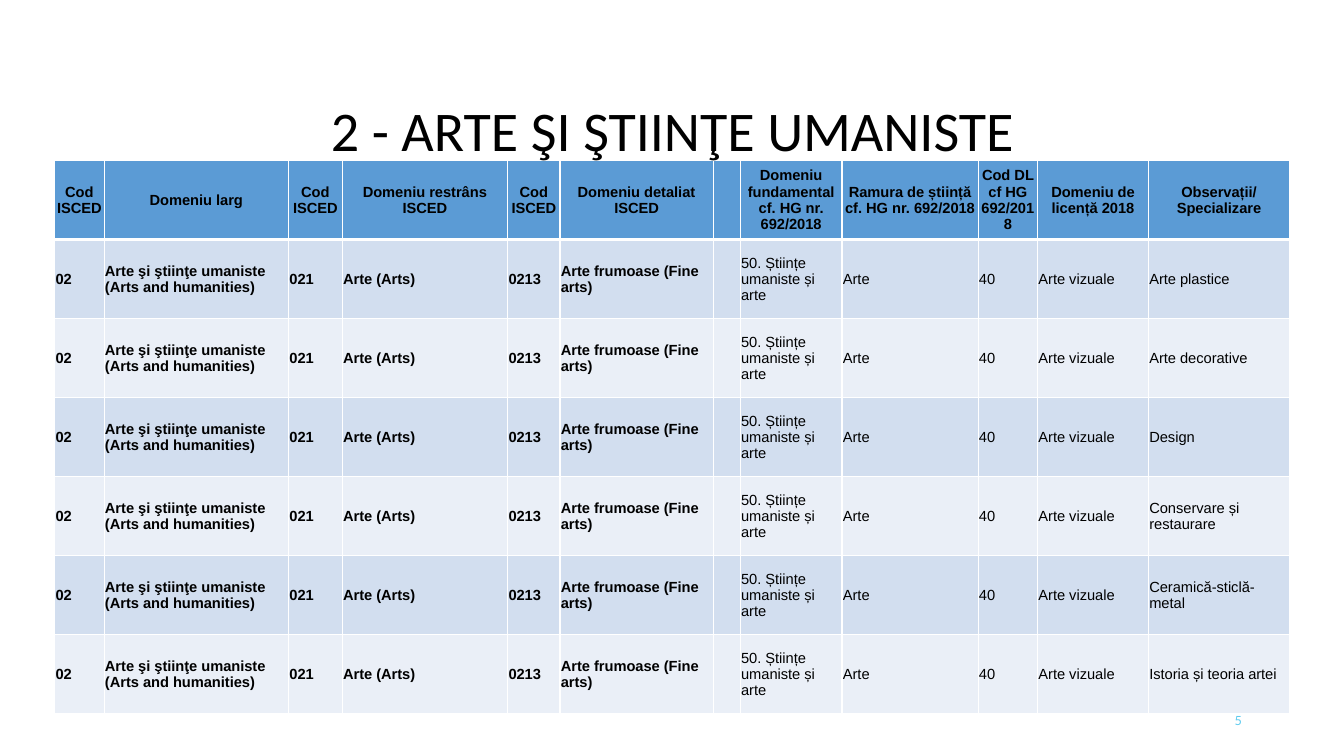
"""Build the slide listing the ISCED fields for arts and humanities."""
import pptx
import pptx.util
import pptx.dml.color
import pptx.enum.text
import pptx.oxml
import pptx.oxml.ns

Pt = pptx.util.Pt
ALIGN = pptx.enum.text.PP_ALIGN
MIDDLE = pptx.enum.text.MSO_ANCHOR.MIDDLE

COLORS = {"header": "5B9BD5", "odd": "D2DEEF", "even": "EAEFF7",
          "border": "FFFFFF", "text": "000000", "number": "5FCBEF"}
TITLE = "2 - ARTE ŞI ŞTIINŢE UMANISTE"
PAGE = "5"
COLUMNS = [
    ("Cod ISCED", 35.3), ("Domeniu larg", 131.8), ("Cod ISCED", 38.3),
    ("Domeniu restrâns ISCED", 118.2), ("Cod ISCED", 37.4),
    ("Domeniu detaliat ISCED", 109.4), ("", 19.4),
    ("Domeniu fundamental cf. HG nr. 692/2018", 72.7),
    ("Ramura de știință cf. HG nr. 692/2018", 97.2),
    ("Cod DL cf HG 692/2018", 42.5), ("Domeniu de licență 2018", 79.2),
    ("Observații/ Specializare", 100.8),
]
SHARED = ["02", "Arte şi ştiinţe umaniste (Arts and humanities)", "021",
          "Arte (Arts)", "0213", "Arte frumoase (Fine arts)", "",
          "50. Științe umaniste și arte", "Arte", "40", "Arte vizuale"]
SPECIALIZATIONS = ["Arte plastice", "Arte decorative", "Design",
                   "Conservare și restaurare", "Ceramică-sticlă-metal",
                   "Istoria și teoria artei"]
BOLD_COLUMNS = 6
LEFT, TOP, ROW_HEIGHT = 39.1, 114.7, 56.45


def write(p, text, size, font, color, align, bold=False):
    """Add one formatted run to a paragraph."""
    p.alignment = align
    r = p.add_run()
    r.text = text
    r.font.size, r.font.name, r.font.bold = Pt(size), font, bold
    r.font.color.rgb = pptx.dml.color.RGBColor.from_string(COLORS[color])


def set_borders(cell, top, bottom):
    """Draw white borders round a cell."""
    tc_pr = cell._tc.get_or_add_tcPr()
    for side, width in (("L", 1), ("R", 1), ("T", top), ("B", bottom)):
        tc_pr.append(pptx.oxml.parse_xml(
            f'<a:ln{side} {pptx.oxml.ns.nsdecls("a")} w="{Pt(width)}"><a:solidFill>'
            f'<a:srgbClr val="{COLORS["border"]}"/></a:solidFill></a:ln{side}>'))


def add_table(slide):
    """Add the table of fields and specializations."""
    rows = [[name for name, _ in COLUMNS]] + [SHARED + [s] for s in SPECIALIZATIONS]
    width = sum(w for _, w in COLUMNS)
    table = slide.shapes.add_table(len(rows), len(COLUMNS), Pt(LEFT), Pt(TOP),
                                   Pt(width), Pt(ROW_HEIGHT * len(rows))).table
    for column, (_, w) in zip(table.columns, COLUMNS):
        column.width = Pt(w)
    for i, values in enumerate(rows):
        header = i == 0
        fill = "header" if header else ("odd" if i % 2 else "even")
        inset = Pt(0 if header else 0.6)
        for j, text in enumerate(values):
            cell = table.cell(i, j)
            cell.vertical_anchor = MIDDLE
            cell.margin_left = cell.margin_top = cell.margin_right = inset
            cell.margin_bottom = 0
            set_borders(cell, 3 if i == 1 else 1, 3 if header else 1)
            cell.fill.solid()
            cell.fill.fore_color.rgb = pptx.dml.color.RGBColor.from_string(COLORS[fill])
            if text:
                write(cell.text_frame.paragraphs[0], text, 10.5, "Arial", "text",
                      ALIGN.CENTER if header else ALIGN.LEFT,
                      header or j < BOLD_COLUMNS)


def add_number(slide):
    """Add the slide number."""
    sp = slide.shapes.add_textbox(Pt(678.2), Pt(500.5), Pt(216), Pt(28.8))
    tf = sp.text_frame
    tf.word_wrap, tf.vertical_anchor = True, MIDDLE
    write(tf.paragraphs[0], PAGE, 9, "Lato", "number", ALIGN.RIGHT)


def add_title(slide):
    """Fill the title placeholder and bring it to the front."""
    sp = slide.shapes.title
    sp.left, sp.top, sp.width, sp.height = Pt(66.2), Pt(69.1), Pt(828), Pt(51.8)
    tf = sp.text_frame
    tf.word_wrap, tf.vertical_anchor = True, MIDDLE
    tf.auto_size = pptx.enum.text.MSO_AUTO_SIZE.NONE
    p = tf.paragraphs[0]
    p.line_spacing = 0.9
    write(p, TITLE, 40, "Calibri", "text", ALIGN.CENTER)
    slide.shapes._spTree.append(sp._element)


def main():
    """Create and save the presentation."""
    prs = pptx.Presentation()
    prs.slide_width, prs.slide_height = Pt(960), Pt(540)
    slide = prs.slides.add_slide(prs.slide_layouts[5])
    add_table(slide)
    add_number(slide)
    add_title(slide)
    prs.save("out.pptx")


if __name__ == "__main__":
    main()
